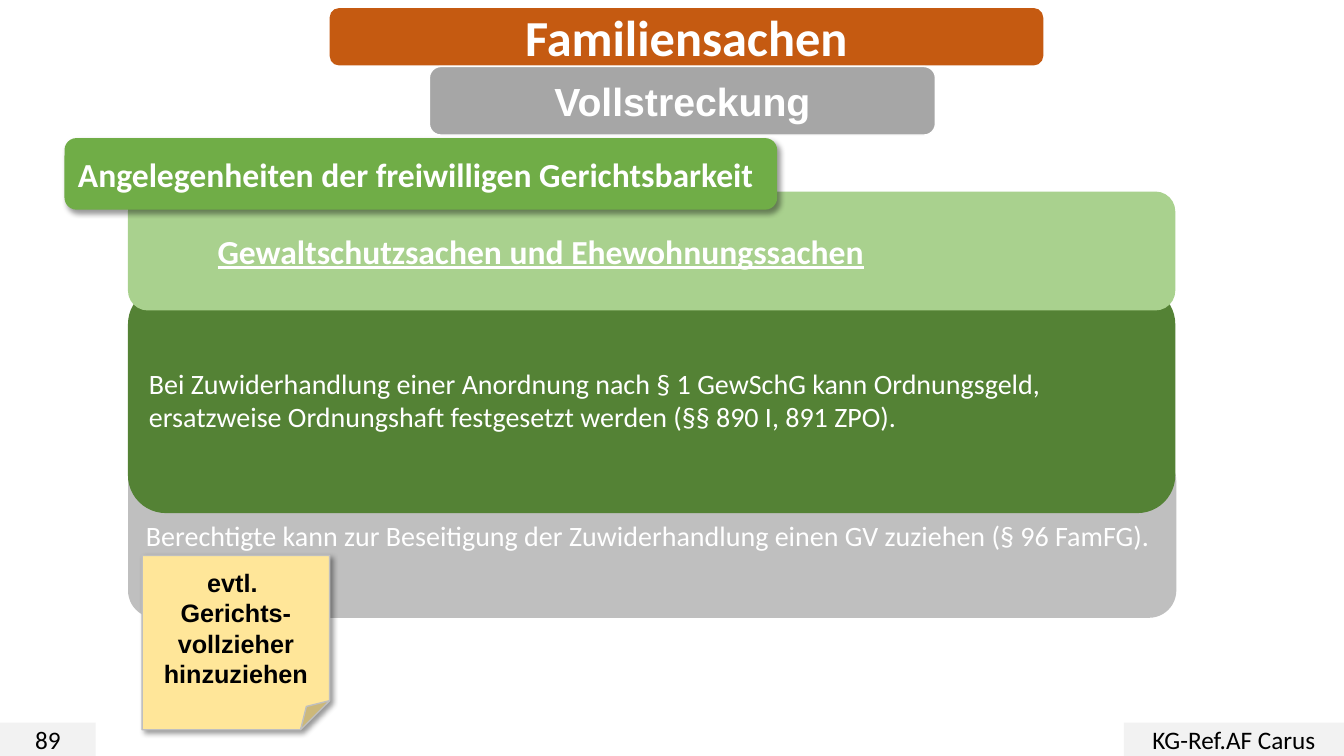
"""Build the slide on enforcement in family matters."""
import dataclasses

import pptx
import pptx.dml.color
import pptx.enum.shapes
import pptx.enum.text
import pptx.oxml.ns
import pptx.util
from lxml import etree

SHAPES = pptx.enum.shapes.MSO_SHAPE
CENTER = pptx.enum.text.PP_ALIGN.CENTER
LEFT = pptx.enum.text.PP_ALIGN.LEFT
COLUMNS = 40
ROWS = 22.5


@dataclasses.dataclass(frozen=True)
class Theme:
    white: str = "FFFFFF"
    black: str = "000000"
    orange: str = "C55A11"
    grey: str = "A6A6A6"
    silver: str = "BFBFBF"
    mist: str = "F2F2F2"
    dark_green: str = "548235"
    green: str = "70AD47"
    light_green: str = "A9D18E"
    yellow: str = "FFE699"
    body_font: str = "Calibri"
    accent_font: str = "Arial"
    title: int = 36
    subtitle: int = 28
    heading: int = 24
    body: int = 20
    small: int = 18


class SlideBuilder:
    def __init__(self, presentation, theme):
        self.theme = theme
        self.slide = presentation.slides.add_slide(presentation.slide_layouts[6])
        self.column = presentation.slide_width / COLUMNS
        self.row = presentation.slide_height / ROWS

    def place(self, left, top, width, height):
        return (int(left * self.column), int(top * self.row),
                int(width * self.column), int(height * self.row))

    def color(self, value):
        return pptx.dml.color.RGBColor.from_string(value)

    def set_text(self, shape, text, size, color=None, font=None,
                 bold=False, underline=False, align=LEFT):
        frame = shape.text_frame
        frame.word_wrap = True
        frame.vertical_anchor = pptx.enum.text.MSO_ANCHOR.MIDDLE
        frame.text = text
        for paragraph in frame.paragraphs:
            paragraph.alignment = align
            for run in paragraph.runs:
                run.font.name = font or self.theme.body_font
                run.font.size = pptx.util.Pt(size)
                run.font.bold = bold
                run.font.underline = underline
                run.font.color.rgb = self.color(color or self.theme.white)

    def panel(self, place, fill, kind=SHAPES.ROUNDED_RECTANGLE, line=None):
        shape = self.slide.shapes.add_shape(kind, *self.place(*place))
        shape.shadow.inherit = False
        shape.fill.solid()
        shape.fill.fore_color.rgb = self.color(fill)
        if line:
            shape.line.color.rgb = self.color(line)
            shape.line.width = pptx.util.Pt(1)
        else:
            shape.line.fill.background()
        return shape

    def label(self, place, text, size, **style):
        shape = self.slide.shapes.add_textbox(*self.place(*place))
        self.set_text(shape, text, size, **style)

    def footer(self, left, width, text):
        height = 0.99
        shape = self.panel((left, ROWS - height, width, height),
                           self.theme.mist, SHAPES.RECTANGLE)
        self.set_text(shape, text, self.theme.small, self.theme.black, align=CENTER)

    def cast_shadow(self, shape):
        qn = pptx.oxml.ns.qn
        effects = shape.element.spPr.find(qn("a:effectLst"))
        shadow = etree.SubElement(
            effects, qn("a:outerShdw"), blurRad=str(pptx.util.Pt(4)),
            dist=str(pptx.util.Pt(3)), dir="2700000", algn="tl", rotWithShape="0")
        color = etree.SubElement(shadow, qn("a:srgbClr"), val=self.theme.black)
        etree.SubElement(color, qn("a:alpha"), val="40000")


def main():
    presentation = pptx.Presentation()
    presentation.slide_width = pptx.util.Inches(13.33)
    presentation.slide_height = pptx.util.Inches(7.5)
    theme = Theme()
    builder = SlideBuilder(presentation, theme)
    card_left, card_width = 3.81, 31.17

    bailiff = builder.panel((card_left, 13.5, card_width + 0.03, 4.89), theme.silver)
    builder.set_text(bailiff, "Berechtigte kann zur Beseitigung der Zuwiderhandlung "
                     "einen GV zuziehen (§ 96 FamFG).", theme.body)
    penalty = builder.panel((card_left, 8.52, card_width, 6.75), theme.dark_green)
    builder.set_text(penalty, "Bei Zuwiderhandlung einer Anordnung nach § 1 GewSchG kann "
                     "Ordnungsgeld, ersatzweise Ordnungshaft festgesetzt werden "
                     "(§§ 890 I, 891 ZPO).", theme.body)

    title = builder.panel((9.81, 0.24, 21.24, 1.71), theme.orange)
    builder.set_text(title, "Familiensachen", theme.title, bold=True, align=CENTER)
    builder.footer(0, 2.85, "89")
    builder.footer(33.45, COLUMNS - 33.45, "KG-Ref.AF Carus")
    subtitle = builder.panel((12.78, 1.98, 15.06, 2.04), theme.grey, line=theme.white)
    builder.set_text(subtitle, "Vollstreckung", theme.subtitle,
                     font=theme.accent_font, bold=True, align=CENTER)

    builder.panel((card_left, 5.7, card_width, 3.54), theme.light_green)
    builder.label((6.18, 6.72, 28.8, 1.5), "Gewaltschutzsachen und Ehewohnungssachen",
                  theme.heading, bold=True, underline=True)
    topic = builder.panel((1.92, 4.11, 21.21, 2.13), theme.green)
    builder.set_text(topic, "Angelegenheiten der freiwilligen Gerichtsbarkeit",
                     theme.heading, bold=True)
    builder.cast_shadow(topic)

    note = builder.panel((4.23, 16.53, 5.58, 5.19), theme.yellow,
                         SHAPES.FOLDED_CORNER, theme.silver)
    builder.set_text(note, "evtl. \nGerichts-vollzieher hinzuziehen", theme.small,
                     theme.black, theme.accent_font, bold=True, align=CENTER)
    builder.cast_shadow(note)
    presentation.save("out.pptx")


if __name__ == "__main__":
    main()
